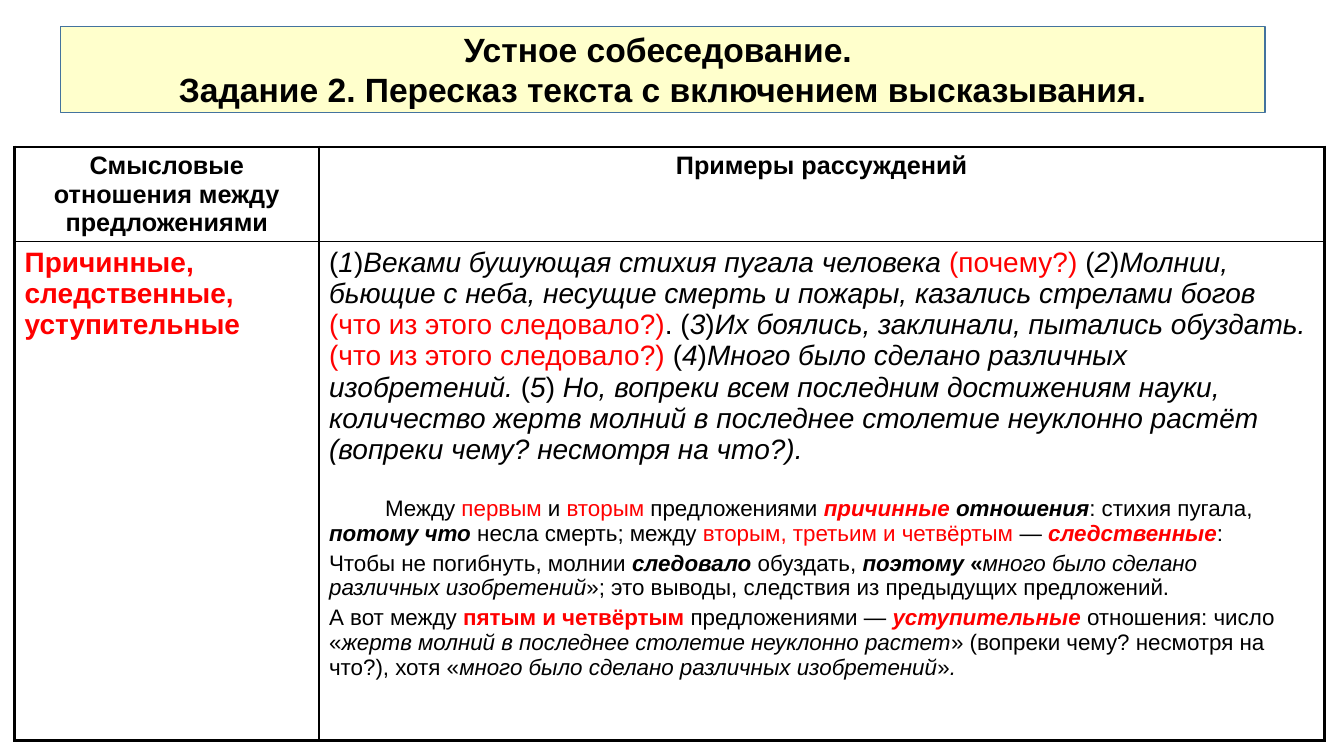
from lxml.etree import SubElement
from pptx import Presentation
from pptx.dml.color import RGBColor
from pptx.enum.shapes import MSO_SHAPE
from pptx.enum.text import MSO_ANCHOR, PP_ALIGN
from pptx.oxml.ns import qn
from pptx.util import Pt

# Run styles: b = bold, i = italic, r = red
TITLE = [
    [("Устное собеседование. ", "b")],
    [("Задание 2. Пересказ текста с включением высказывания.", "b")],
]
HEADINGS = ["Смысловые отношения между предложениями", "Примеры рассуждений"]
RELATIONS = "Причинные, следственные, уступительные"
EXAMPLE = [
    ("(", ""), ("1", "i"), (")", ""),
    ("Веками бушующая стихия пугала человека ", "i"),
    ("(почему?) ", "r"),
    ("(", ""), ("2", "i"), (")", ""),
    ("Молнии, бьющие с неба, несущие смерть и пожары, казались стрелами богов ", "i"),
    ("(что из этого следовало?)", "r"),
    (". (", ""), ("3", "i"), (")", ""),
    ("Их боялись, заклинали, пытались обуздать.", "i"),
    (" (что из этого следовало?) ", "r"),
    ("(", ""), ("4", "i"), (")", ""),
    ("Много было сделано различных изобретений. ", "i"),
    ("(", ""), ("5", "i"), (")", ""),
    (" Но, вопреки всем последним достижениям науки, количество жертв молний "
     "в последнее столетие неуклонно растёт (вопреки чему? несмотря на что?).", "i"),
]
CAUSES = [
    ("Между ", ""), ("первым ", "r"), ("и ", ""), ("вторым", "r"),
    (" предложениями ", ""), ("причинные ", "bir"), ("отношения", "bi"),
    (": стихия пугала, ", ""), ("потому что ", "bi"),
    ("несла смерть; между ", ""), ("вторым, третьим и четвёртым", "r"),
    (" — ", ""), ("следственные", "bir"), (":", ""),
]
CONSEQUENCES = [
    ("Чтобы не погибнуть, молнии ", ""), ("следовало ", "bi"),
    ("обуздать, ", ""), ("поэтому ", "bi"), ("«", "b"),
    ("много было сделано различных изобретений", "i"),
    ("»; это выводы, следствия из предыдущих предложений.", ""),
]
CONCESSIONS = [
    ("А вот между ", ""), ("пятым и четвёртым", "br"),
    (" предложениями — ", ""), ("уступительные", "bir"),
    (" отношения: число «", ""),
    ("жертв молний в последнее столетие неуклонно растет", "i"),
    ("» (вопреки чему? несмотря на что?), хотя «", ""),
    ("много было сделано различных изобретений", "i"),
    ("»", ""), (".", "i"),
]

THEME = {
    "font": "Arial",
    "text": RGBColor(0, 0, 0),
    "accent": RGBColor(255, 0, 0),
    "banner": RGBColor(255, 255, 204),
    "banner_line": RGBColor(0x43, 0x73, 0x9E),
    "title": 24, "heading": 18, "example": 20, "analysis": 16,
    "outer_line": 2.25, "inner_line": 1,
}
COLUMN_WIDTHS = [217.5, 718]
ROW_HEIGHTS = [67.5, 356.5]


def write(frame, runs, size, align=PP_ALIGN.LEFT, before=0, indent=0):
    """Add one paragraph of (text, style) runs, using the empty first one if free."""
    paragraph = frame.paragraphs[0]
    if paragraph.runs:
        paragraph = frame.add_paragraph()
    paragraph.alignment = align
    paragraph.space_before = Pt(before)
    if indent:
        properties = paragraph._p.get_or_add_pPr()
        properties.set("marL", "0")
        properties.set("indent", str(Pt(indent)))
    for text, style in runs:
        run = paragraph.add_run()
        run.text = text
        run.font.name = THEME["font"]
        run.font.size = Pt(size)
        run.font.bold = "b" in style
        run.font.italic = "i" in style
        run.font.color.rgb = THEME["accent" if "r" in style else "text"]


def set_borders(cell, outer_sides):
    properties = cell._tc.get_or_add_tcPr()
    for side in "LRTB":
        width = THEME["outer_line" if side in outer_sides else "inner_line"]
        line = SubElement(properties, qn(f"a:ln{side}"), w=str(Pt(width)))
        fill = SubElement(line, qn("a:solidFill"))
        SubElement(fill, qn("a:srgbClr"), val=str(THEME["text"]))


def add_banner(slide):
    banner = slide.shapes.add_shape(MSO_SHAPE.RECTANGLE, Pt(43), Pt(18.8), Pt(860.5), Pt(61.5))
    banner.shadow.inherit = False
    banner.fill.solid()
    banner.fill.fore_color.rgb = THEME["banner"]
    banner.line.color.rgb = THEME["banner_line"]
    banner.line.width = Pt(1)
    frame = banner.text_frame
    frame.word_wrap = True
    frame.vertical_anchor = MSO_ANCHOR.MIDDLE
    for runs in TITLE:
        write(frame, runs, THEME["title"], align=PP_ALIGN.CENTER)


def add_relations_table(slide):
    table = slide.shapes.add_table(
        2, 2, Pt(10.4), Pt(105), Pt(sum(COLUMN_WIDTHS)), Pt(sum(ROW_HEIGHTS))).table
    table.first_row = table.horz_banding = False
    for column, width in zip(table.columns, COLUMN_WIDTHS):
        column.width = Pt(width)
    for row, height in zip(table.rows, ROW_HEIGHTS):
        row.height = Pt(height)
    for row in range(2):
        for column in range(2):
            cell = table.cell(row, column)
            set_borders(cell, "TB"[row] + "LR"[column])
            cell.fill.background()

    for column, heading in enumerate(HEADINGS):
        write(table.cell(0, column).text_frame, [(heading, "b")],
              THEME["heading"], align=PP_ALIGN.CENTER)
    write(table.cell(1, 0).text_frame, [(RELATIONS, "br")], THEME["example"])
    frame = table.cell(1, 1).text_frame
    write(frame, EXAMPLE, THEME["example"])
    write(frame, CAUSES, THEME["analysis"], before=22, indent=40)
    for runs in (CONSEQUENCES, CONCESSIONS):
        write(frame, runs, THEME["analysis"], before=3.5)


def main():
    presentation = Presentation()
    presentation.slide_width, presentation.slide_height = Pt(960), Pt(540)
    slide = presentation.slides.add_slide(presentation.slide_layouts[6])
    add_relations_table(slide)
    add_banner(slide)
    presentation.save("out.pptx")


if __name__ == "__main__":
    main()
